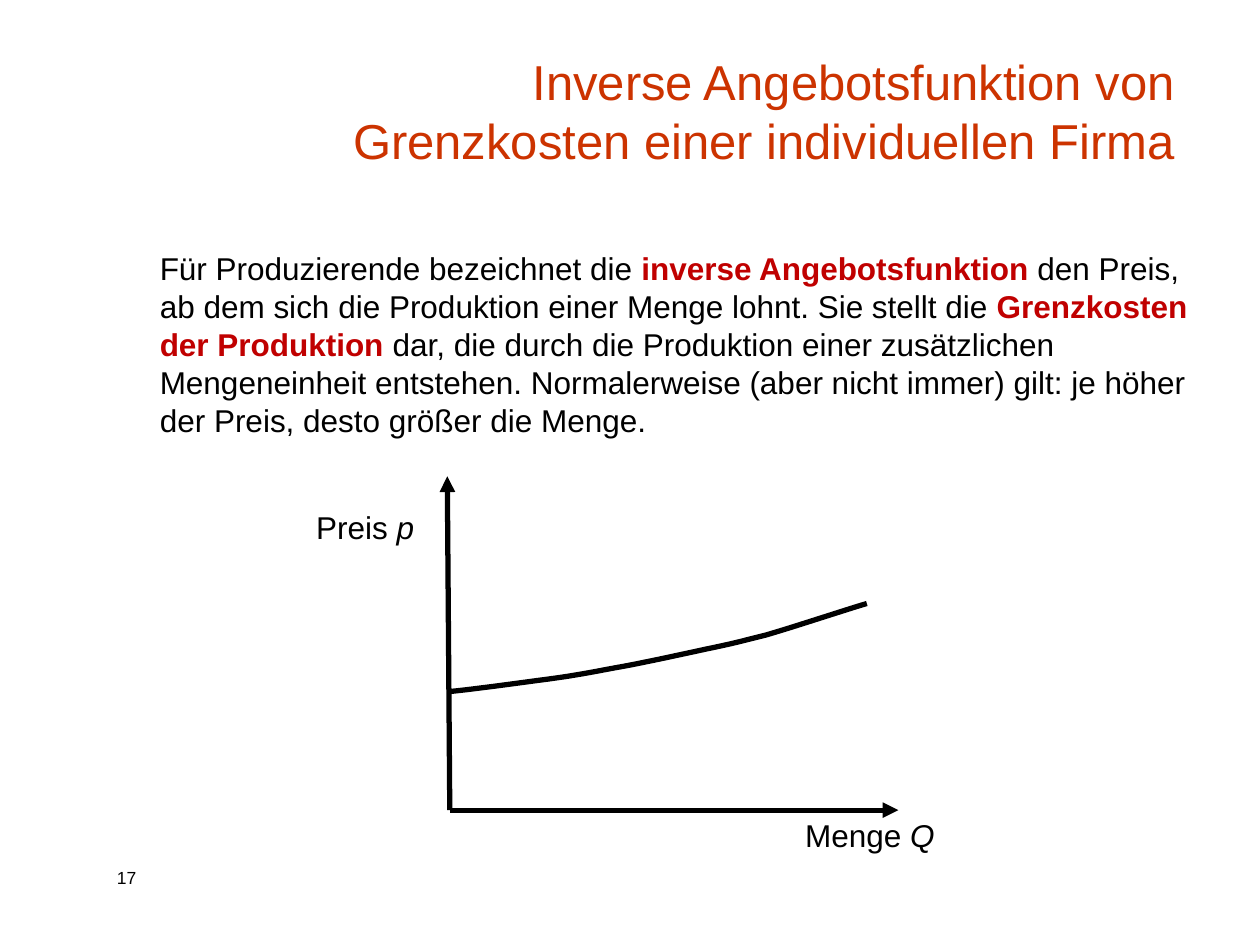
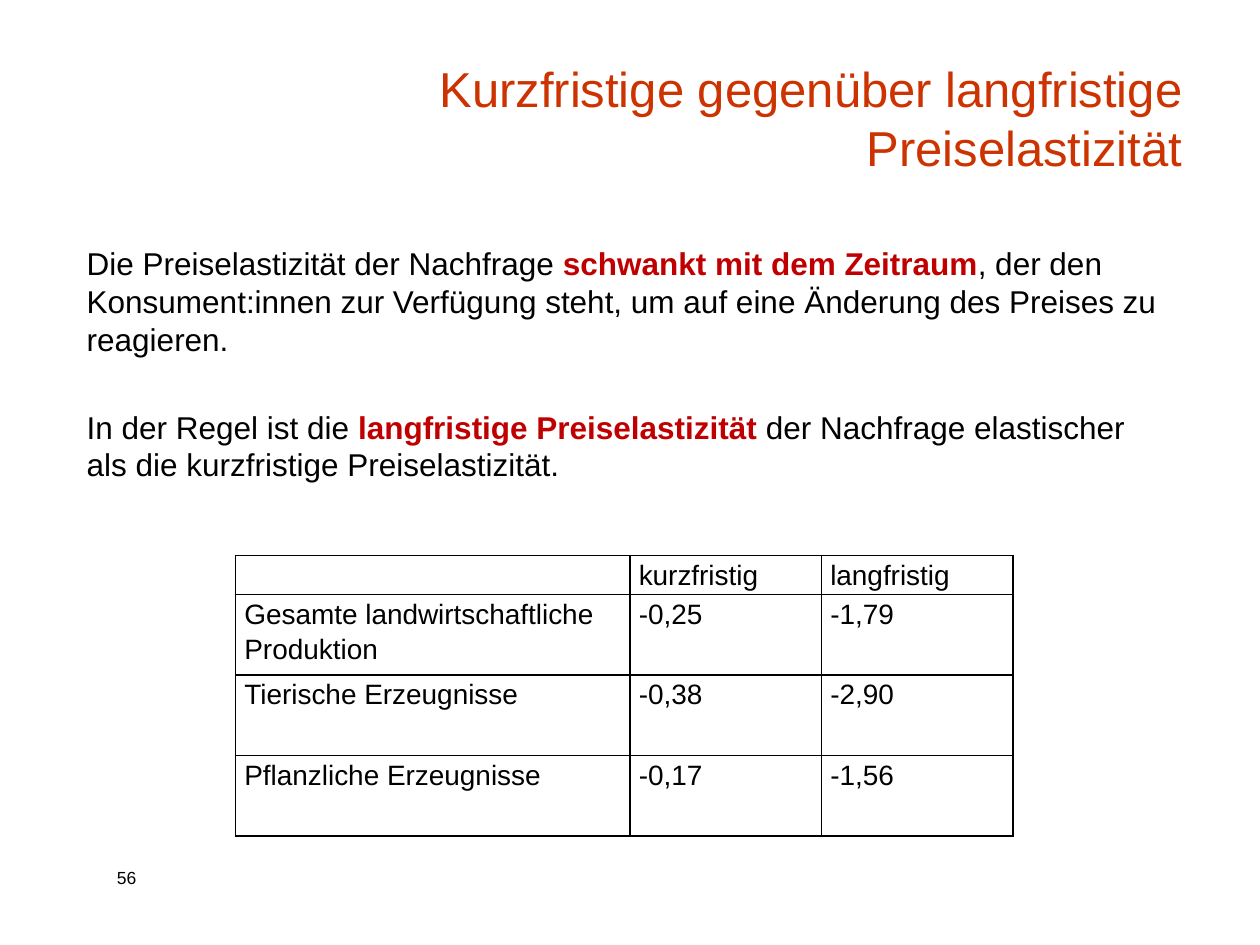
import pptx
import pptx.util
import pptx.dml.color
import pptx.enum.shapes
import pptx.enum.text
import pptx.oxml.ns
import lxml.etree

Inches = pptx.util.Inches
Pt = pptx.util.Pt
RGBColor = pptx.dml.color.RGBColor
ALIGN = pptx.enum.text.PP_ALIGN
ANCHOR = pptx.enum.text.MSO_ANCHOR

BLACK = RGBColor(0x00, 0x00, 0x00)
TITLE_RED = RGBColor(0xCC, 0x33, 0x00)
KEY_RED = RGBColor(0xC0, 0x00, 0x00)
FONT = "Arial"
KEY = {"bold": True, "color": KEY_RED}
ITALIC = {"italic": True}


def add_xml(parent, tag, **attributes):
    return lxml.etree.SubElement(parent, pptx.oxml.ns.qn(tag), attributes)


def write(paragraph, text, size=18, color=BLACK, bold=False, italic=False):
    """Append one formatted run to a paragraph."""
    run = paragraph.add_run()
    run.text = text
    font = run.font
    font.name, font.size, font.bold, font.italic = FONT, Pt(size), bold, italic
    font.color.rgb = color


def curve_points(start, segments, steps=12):
    """Points along a chain of cubic curves (control, control, end)."""
    points = [start]
    for c1, c2, end in segments:
        for step in range(1, steps + 1):
            t = step / steps
            u = 1 - t
            weights = (u ** 3, 3 * u * u * t, 3 * u * t * t, t ** 3)
            points.append(tuple(
                sum(w * value for w, value in zip(weights, values))
                for values in zip(start, c1, c2, end)))
        start = end
    return points


class Deck:
    def __init__(self):
        self.presentation = pptx.Presentation()
        self.presentation.slide_width = Inches(10)
        self.presentation.slide_height = Inches(7.5)
        self.slide = None

    def new_slide(self, title, title_box, number):
        self.slide = self.presentation.slides.add_slide(
            self.presentation.slide_layouts[6])
        self.text(title_box, [[(title, {"size": 28, "color": TITLE_RED})]],
                  align=ALIGN.RIGHT, anchor=ANCHOR.BOTTOM)
        self.text((0.83, 6.83, 0.67, 0.27), [[(number, {"size": 10})]])

    def text(self, box, paragraphs, align=ALIGN.LEFT, anchor=ANCHOR.TOP,
             inset=True, gap=0):
        frame = self.slide.shapes.add_textbox(*map(Inches, box)).text_frame
        frame.word_wrap = True
        frame.vertical_anchor = anchor
        if not inset:
            frame.margin_left = frame.margin_right = 0
            frame.margin_top = frame.margin_bottom = 0
        for index, runs in enumerate(paragraphs):
            paragraph = frame.add_paragraph() if index else frame.paragraphs[0]
            paragraph.alignment = align
            if index:
                paragraph.space_before = Pt(gap)
            for content, style in runs:
                write(paragraph, content, **style)

    def stroke(self, line, width=3):
        line.color.rgb = BLACK
        line.width = Pt(width)

    def arrow(self, start, end):
        connector = self.slide.shapes.add_connector(
            pptx.enum.shapes.MSO_CONNECTOR.STRAIGHT,
            *map(Inches, start + end))
        self.stroke(connector.line)
        add_xml(connector.line._get_or_add_ln(), "a:tailEnd", type="triangle")
        add_xml(connector._element.spPr, "a:effectLst")

    def curve(self, start, segments):
        points = [tuple(map(Inches, point))
                  for point in curve_points(start, segments)]
        builder = self.slide.shapes.build_freeform(*points[0])
        builder.add_line_segments(points[1:], close=False)
        shape = builder.convert_to_shape()
        shape.fill.background()
        shape.shadow.inherit = False
        self.stroke(shape.line)

    def table(self, left, top, widths, heights, rows):
        table = self.slide.shapes.add_table(
            len(rows), len(widths), Inches(left), Inches(top),
            Inches(sum(widths)), Inches(sum(heights))).table
        table.first_row = table.horz_banding = False
        for column, width in zip(table.columns, widths):
            column.width = Inches(width)
        for row, height, values in zip(table.rows, heights, rows):
            row.height = Inches(height)
            for cell, value in zip(row.cells, values):
                self.cell(cell, value)

    def cell(self, cell, value):
        cell.margin_left = cell.margin_right = Inches(0.07)
        cell.margin_top = cell.margin_bottom = 0
        if value:
            paragraph = cell.text_frame.paragraphs[0]
            paragraph.line_spacing = 1.15
            paragraph.space_after = Pt(5)
            write(paragraph, value, size=16)
        # Borders come before the fill in the cell properties
        properties = cell._tc.get_or_add_tcPr()
        for side in ("a:lnL", "a:lnR", "a:lnT", "a:lnB"):
            border = add_xml(properties, side, w=str(Pt(1)))
            add_xml(add_xml(border, "a:solidFill"), "a:srgbClr",
                    val=str(BLACK))
        cell.fill.background()


def supply_slide(deck):
    deck.new_slide(
        "Inverse Angebotsfunktion von Grenzkosten einer individuellen Firma",
        (2.09, 0.42, 7.33, 0.97), "17")

    # Axes and their labels
    origin = (3.57, 6.43)
    deck.text((2.51, 4.03, 1.3, 0.3),
              [[("Preis", {}), (" p", ITALIC)]], inset=False)
    deck.text((6.39, 6.48, 1.11, 0.35),
              [[("Menge", {}), (" Q", ITALIC)]], inset=False)
    deck.arrow(origin, (7.13, 6.43))
    deck.arrow(origin, (3.55, 3.78))

    # Supply curve
    deck.curve((3.55, 5.49), [
        ((3.69, 5.48), (4.12, 5.42), (4.35, 5.39)),
        ((4.58, 5.36), (4.72, 5.33), (4.94, 5.29)),
        ((5.16, 5.25), (5.47, 5.18), (5.66, 5.14)),
        ((5.85, 5.1), (5.88, 5.09), (6.08, 5.04)),
        ((6.29, 4.98), (6.71, 4.84), (6.88, 4.79)),
    ])

    # Definition
    deck.text((1.17, 1.93, 8.53, 1.62), [[
        ("Für Produzierende bezeichnet die ", {}),
        ("inverse Angebotsfunktion ", KEY),
        ("den Preis, ab dem sich die Produktion einer Menge lohnt. "
         "Sie stellt die ", {}),
        ("Grenzkosten der Produktion ", KEY),
        ("dar, die durch die Produktion einer zusätzlichen Mengeneinheit "
         "entstehen. Normalerweise (aber nicht immer) gilt: je höher der "
         "Preis, desto größer die Menge.", {}),
    ]])


def elasticity_slide(deck):
    deck.new_slide("Kurzfristige gegenüber langfristige Preiselastizität",
                   (2.1, 0.95, 7.38, 0.5), "56")

    # Statements
    deck.text((0.59, 1.89, 8.73, 2.13), [
        [("Die Preiselastizität der Nachfrage ", {}),
         ("schwankt mit dem Zeitraum", KEY),
         (", der den Konsument:innen zur Verfügung steht, um auf eine "
          "Änderung des Preises zu reagieren.", {})],
        [("In der Regel ist die ", {}),
         ("langfristige Preiselastizität ", KEY),
         ("der Nachfrage elastischer als die kurzfristige "
          "Preiselastizität.", {})],
    ], gap=28.5)

    # Elasticities by product group
    deck.table(1.87, 4.41, [3.13, 1.52, 1.52], [0.25] + [0.64] * 3, [
        ("", "kurzfristig", "langfristig"),
        ("Gesamte landwirtschaftliche Produktion", "-0,25", "-1,79"),
        ("Tierische Erzeugnisse", "-0,38", "-2,90"),
        ("Pflanzliche Erzeugnisse", "-0,17", "-1,56"),
    ])


def main():
    deck = Deck()
    supply_slide(deck)
    elasticity_slide(deck)
    deck.presentation.save("out.pptx")


if __name__ == "__main__":
    main()
